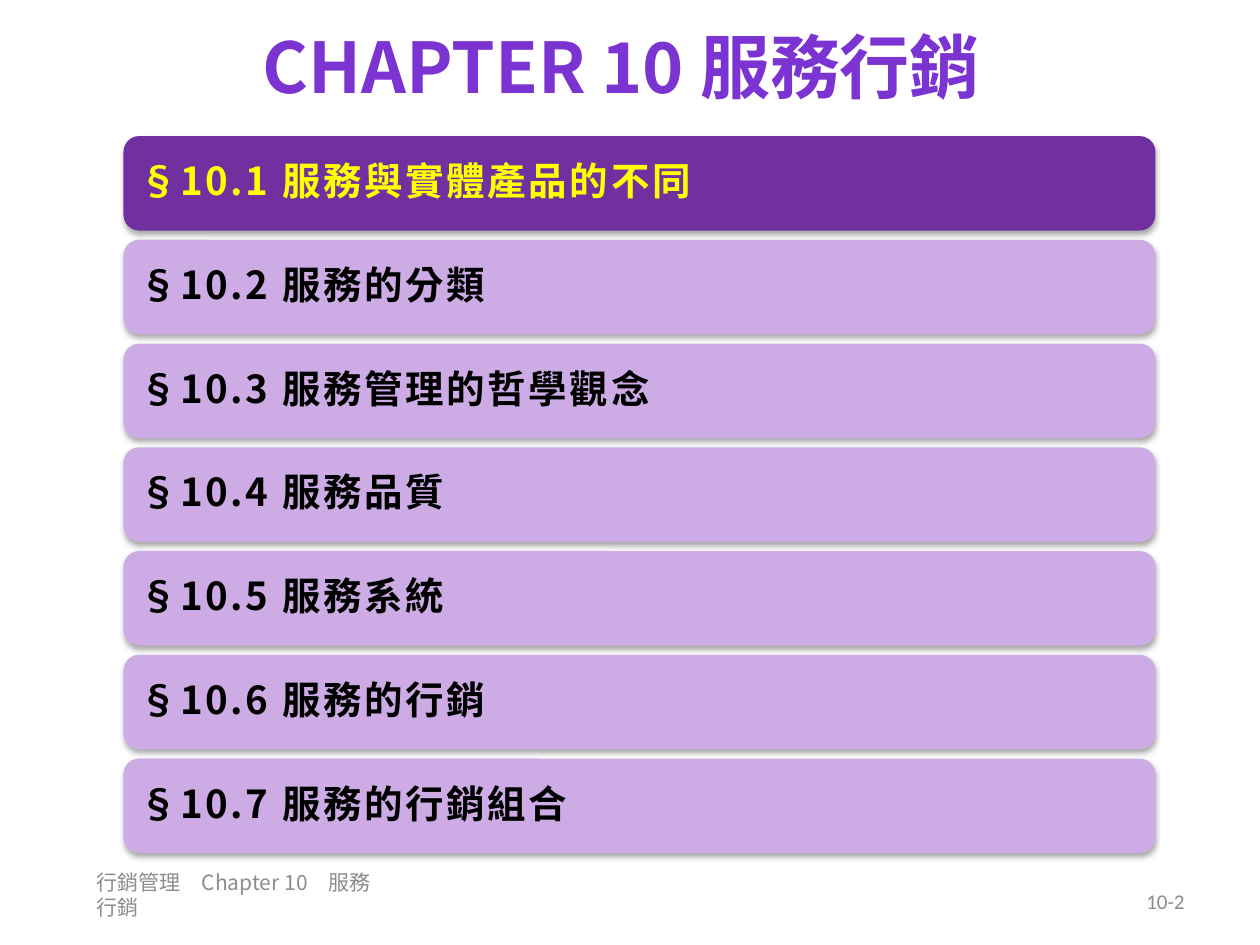
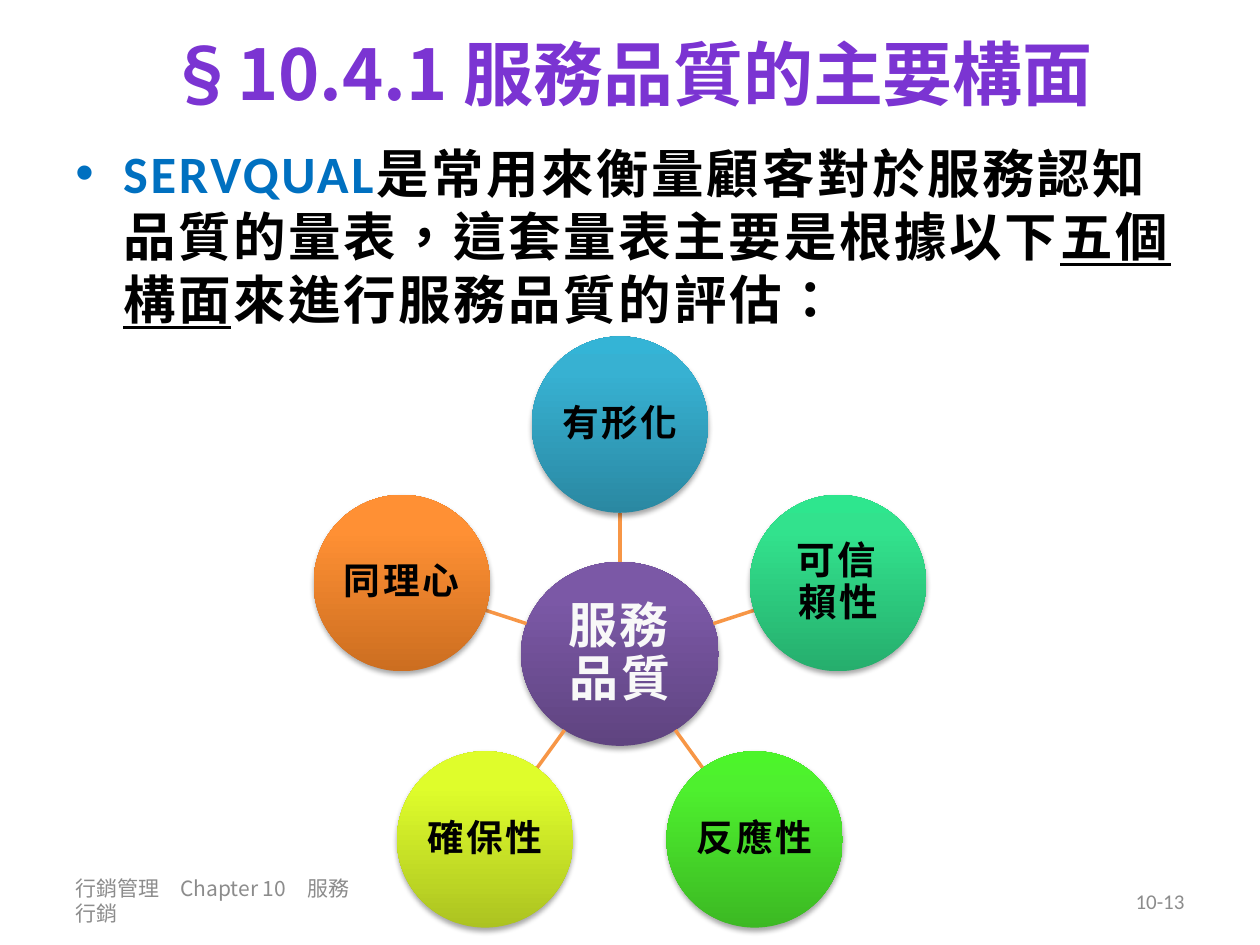
import math
from lxml import etree
from pptx import Presentation
from pptx.dml.color import RGBColor
from pptx.enum.shapes import MSO_CONNECTOR, MSO_SHAPE
from pptx.enum.text import MSO_ANCHOR, PP_ALIGN
from pptx.oxml.ns import qn
from pptx.util import Inches, Pt

LEFT, MID, RIGHT = PP_ALIGN.LEFT, PP_ALIGN.CENTER, PP_ALIGN.RIGHT
TOP, CENTER = MSO_ANCHOR.TOP, MSO_ANCHOR.MIDDLE
ROUND, OVAL = MSO_SHAPE.ROUNDED_RECTANGLE, MSO_SHAPE.OVAL
LINE = MSO_CONNECTOR.STRAIGHT
CALIBRI, NOTO = "Calibri", "Noto Sans CJK SC"

COLORS = {
    "title": "7B34D2", "foot": "8C8C8C", "black": "000000",
    "bar": "CDACE6", "active": "7030A0", "yellow": "FFFF00",
    "term": "0070C0", "light": "F8F8F8", "spoke": "F79646",
}
GRADS = {
    "purple": ("5F4480", "7B58A6", "7C57A8"),
    "blue": ("2A88A2", "37B1D2", "34B4D6"),
    "mint": ("26AE6D", "32E28D", "2EE68E"),
    "green": ("3CB923", "4EF02E", "4CF52A"),
    "lime": ("ACC321", "DFFD2B", "E1FF2B"),
    "orange": ("CC6E20", "FF9034", "FF9136"),
}
STOPS = (0, 80000, 100000)


def node(parent, tag, **attrs):
    item = etree.SubElement(parent, qn(tag))
    for key, value in attrs.items():
        item.set(key, str(value))
    return item


class Deck:
    def __init__(self):
        self.prs = Presentation()
        self.prs.slide_width = Inches(10)
        self.prs.slide_height = Inches(7.5)
        self.slide = None

    def start(self):
        self.slide = self.prs.slides.add_slide(self.prs.slide_layouts[6])

    def run(self, para, text, size, color, font=NOTO, bold=True, space=0, under=False):
        run = para.add_run()
        run.text = text
        face = run.font
        face.size, face.bold, face.name = Pt(size), bold, font
        face.color.rgb = RGBColor.from_string(COLORS[color])
        if under:
            face.underline = True
        props = face._element
        props.set("lang", "zh-TW")
        if space:
            props.set("spc", str(round(space * 100)))
        props.find(qn("a:latin")).addnext(etree.Element(qn("a:ea"), typeface=NOTO))

    def frame(self, shape, align, anchor=CENTER, inset=None):
        frame = shape.text_frame
        frame.word_wrap = True
        frame.vertical_anchor = anchor
        if inset is not None:
            frame.margin_left = frame.margin_right = Inches(inset)
            frame.margin_top = frame.margin_bottom = Inches(inset)
        para = frame.paragraphs[0]
        para.alignment = align
        return para

    def text(self, box, align, anchor=CENTER):
        shape = self.slide.shapes.add_textbox(*map(Inches, box))
        return self.frame(shape, align, anchor)

    def title(self, box, *parts):
        para = self.text(box, MID)
        for text, font in parts:
            self.run(para, text, 40, "title", font)

    def footer(self, left, top, page):
        note = self.text((left, top, 2.45, 0.4), LEFT)
        self.run(note, "行銷管理　Chapter 10　服務行銷", 12, "foot", bold=False)
        number = self.text((7.17, 6.95, 2.33, 0.4), RIGHT)
        self.run(number, page, 12, "foot", CALIBRI, bold=False)

    def shape(self, kind, box, align, inset):
        shape = self.slide.shapes.add_shape(kind, *map(Inches, box))
        shape.line.fill.background()
        shape.shadow.inherit = False
        effects = shape._element.spPr.find(qn("a:effectLst"))
        shadow = node(effects, "a:outerShdw", blurRad=Pt(3.1), dist=Pt(1.8),
                      dir=5400000, rotWithShape=0)
        node(node(shadow, "a:srgbClr", val=COLORS["black"]), "a:alpha", val=35000)
        para = self.frame(shape, align, inset=inset)
        para.line_spacing = 0.9
        return shape, para

    def bar(self, box, parts, fill, color):
        shape, para = self.shape(ROUND, box, LEFT, 0.09)
        shape.fill.solid()
        shape.fill.fore_color.rgb = RGBColor.from_string(COLORS[fill])
        for text, font in parts:
            self.run(para, text, 22, color, font, space=1.5)

    def disc(self, x, y, wide, high, text, size, grad, color="black"):
        box = (x - wide / 2, y - high / 2, wide, high)
        shape, para = self.shape(OVAL, box, MID, 0.01)
        fill = etree.Element(qn("a:gradFill"), rotWithShape="1")
        stops = node(fill, "a:gsLst")
        for pos, tone in zip(STOPS, GRADS[grad]):
            node(node(stops, "a:gs", pos=pos), "a:srgbClr", val=tone)
        node(fill, "a:lin", ang=16200000, scaled=0)
        shape._element.spPr.find(qn("a:prstGeom")).addnext(fill)
        self.run(para, text, size, color, CALIBRI, space=1.5)

    def spoke(self, *ends):
        line = self.slide.shapes.add_connector(LINE, *map(Inches, ends))
        line.line.width = Pt(2)
        line.line.color.rgb = RGBColor.from_string(COLORS["spoke"])
        node(line._element.spPr, "a:effectLst")

    def body(self, box, parts):
        para = self.text(box, LEFT, TOP)
        props = para._p.get_or_add_pPr()
        props.set("marL", str(Inches(0.38)))
        props.set("indent", str(Inches(-0.38)))
        node(props, "a:buFont", typeface="Arial")
        node(props, "a:buChar", char="•")
        for text, color, under in parts:
            self.run(para, text, 30, color, CALIBRI, space=1.5, under=under)


def outline(deck):
    deck.start()
    deck.footer(0.67, 6.9, "10-2")
    deck.title((0.43, 0.04, 9, 0.96), ("CHAPTER 10 服務行銷", NOTO))
    topics = ("服務與實體產品的不同", "服務的分類", "服務管理的哲學觀念",
              "服務品質", "服務系統", "服務的行銷", "服務的行銷組合")
    pitch = (6.02 - 1.08) / (len(topics) - 1)
    for i, topic in enumerate(topics):
        fill, color = ("bar", "black") if i else ("active", "yellow")
        parts = ((f"§10.{i + 1} ", NOTO), (topic, CALIBRI))
        deck.bar((0.98, 1.08 + i * pitch, 8.19, 0.75), parts, fill, color)


def quality(deck):
    deck.start()
    deck.title((0.5, 0, 9, 1.15), ("§10.4.1 ", NOTO), ("服務品質的主要構面", CALIBRI))
    deck.body((0.5, 1.07, 9, 2.44), (
        ("SERVQUAL", "term", False),
        ("是常用來衡量顧客對於服務認知品質的量表，這套量表主要是根據以下", "black", False),
        ("五個構面", "black", True),
        ("來進行服務品質的評估：", "black", False),
    ))
    deck.footer(0.5, 6.95, "10-13")
    x, y, wide, high = 4.92, 5.19, 1.57, 1.46
    ring, size = 1.82, 1.4
    deck.disc(x, y, wide, high, "服務品質", 28, "purple", "light")
    facets = (("有形化", 21, "blue"), ("可信賴性", 22, "mint"), ("反應性", 21, "green"),
              ("確保性", 21, "lime"), ("同理心", 21, "orange"))
    for i, (name, points, grad) in enumerate(facets):
        turn = math.radians(360 / len(facets) * i - 90)
        dx, dy = math.cos(turn), math.sin(turn)
        near = 0.5 / math.hypot(dx / wide, dy / high)
        far = ring - size / 2
        deck.spoke(x + near * dx, y + near * dy, x + far * dx, y + far * dy)
        deck.disc(x + ring * dx, y + ring * dy, size, size, name, points, grad)


def main():
    deck = Deck()
    outline(deck)
    quality(deck)
    deck.prs.save("out.pptx")


if __name__ == "__main__":
    main()
